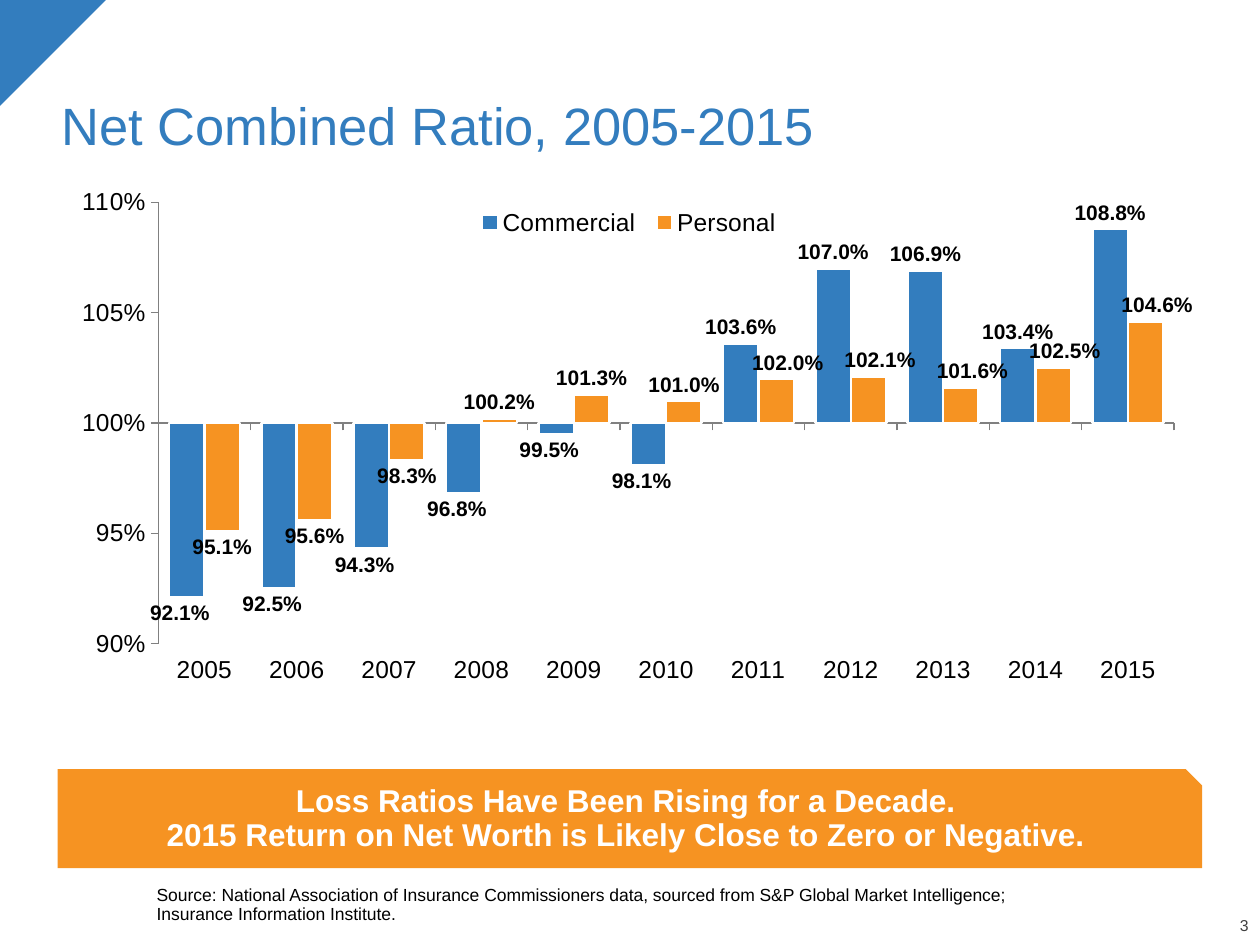
from dataclasses import dataclass

from lxml import etree
from pptx import Presentation
from pptx.chart.data import CategoryChartData
from pptx.dml.color import RGBColor
from pptx.enum.chart import XL_CHART_TYPE, XL_LABEL_POSITION, XL_LEGEND_POSITION, XL_TICK_LABEL_POSITION, XL_TICK_MARK
from pptx.enum.shapes import MSO_SHAPE
from pptx.enum.text import MSO_ANCHOR, MSO_AUTO_SIZE, PP_ALIGN
from pptx.oxml.ns import qn
from pptx.util import Pt

CLUSTERED = XL_CHART_TYPE.COLUMN_CLUSTERED
OUTSIDE_END = XL_LABEL_POSITION.OUTSIDE_END
LEGEND_BOTTOM = XL_LEGEND_POSITION.BOTTOM
LABELS_LOW = XL_TICK_LABEL_POSITION.LOW
TICK_OUT, TICK_NONE = XL_TICK_MARK.OUTSIDE, XL_TICK_MARK.NONE
TRIANGLE, SNIPPED = MSO_SHAPE.RIGHT_TRIANGLE, MSO_SHAPE.SNIP_1_RECTANGLE
BOTTOM, MIDDLE = MSO_ANCHOR.BOTTOM, MSO_ANCHOR.MIDDLE
LEFT, CENTER, RIGHT = PP_ALIGN.LEFT, PP_ALIGN.CENTER, PP_ALIGN.RIGHT
NO_AUTOFIT = MSO_AUTO_SIZE.NONE


@dataclass(frozen=True)
class Theme:
    """Colours, font and type sizes of the slide."""
    font: str = "Arial"
    blue: RGBColor = RGBColor(0x33, 0x7D, 0xBE)
    orange: RGBColor = RGBColor(0xF6, 0x93, 0x22)
    white: RGBColor = RGBColor(0xFF, 0xFF, 0xFF)
    black: RGBColor = RGBColor(0, 0, 0)
    grey: RGBColor = RGBColor(0x40, 0x40, 0x40)
    axis: RGBColor = RGBColor(0x80, 0x80, 0x80)
    title: int = 30
    banner: int = 18
    chart: int = 14
    label: int = 12
    source: int = 10
    number: int = 9


THEME = Theme()
YEARS = [str(year) for year in range(2005, 2016)]
RATIOS = {
    "Commercial": (THEME.blue, [0.921, 0.925, 0.943, 0.968, 0.995, 0.981,
                                1.036, 1.07, 1.069, 1.034, 1.088]),
    "Personal": (THEME.orange, [0.951, 0.956, 0.983, 1.002, 1.013, 1.01,
                                1.02, 1.021, 1.016, 1.025, 1.046]),
}
LABEL_SHIFTS = {
    "Commercial": dict.fromkeys(range(6), -0.006),
    "Personal": dict.fromkeys(range(6, 11), 0.01),
}


def apply(target, values):
    """Set each attribute in values on the target."""
    for name, value in values.items():
        setattr(target, name, value)


def place(shape, box):
    """Move the shape to the box, given in points."""
    apply(shape, dict(zip(("left", "top", "width", "height"), map(Pt, box))))


def style_font(font, size, color, bold=False):
    """Format a font in the theme's typeface."""
    apply(font, {"name": THEME.font, "size": Pt(size), "bold": bold})
    font.color.rgb = color


def write(shape, text, size, color, align=LEFT, anchor=BOTTOM, bold=False, margins=(0, 0, 0, 0)):
    """Write one formatted paragraph into the shape."""
    frame = shape.text_frame
    sides = ("margin_left", "margin_top", "margin_right", "margin_bottom")
    apply(frame, {"word_wrap": True, "auto_size": NO_AUTOFIT, "vertical_anchor": anchor,
                  **dict(zip(sides, map(Pt, margins)))})
    paragraph = frame.paragraphs[0]
    paragraph.text = text
    apply(paragraph, {"alignment": align, "line_spacing": 0.9, "space_before": Pt(0)})
    for run in paragraph.runs:
        style_font(run.font, size, color, bold)


def add_filled(slide, kind, box, color):
    """Add a flat preset shape without outline."""
    shape = slide.shapes.add_shape(kind, *map(Pt, box))
    shape.shadow.inherit = False
    shape.fill.solid()
    shape.fill.fore_color.rgb = color
    shape.line.fill.background()
    return shape


def add_corner(slide, box):
    """Add the triangle in the top left corner."""
    add_filled(slide, TRIANGLE, box, THEME.blue).rotation = 90


def add_title(slide, box, text):
    """Fill the title placeholder."""
    place(slide.shapes.title, box)
    write(slide.shapes.title, text, THEME.title, THEME.blue, margins=(7.2, 3.6, 7.2, 3.6))


def add_source(slide, box, text):
    """Fill the body placeholder with the unbulleted source line."""
    source = slide.placeholders[1]
    place(source, box)
    properties = source.text_frame.paragraphs[0]._p.get_or_add_pPr()
    properties.set("marL", "0")
    properties.set("indent", "0")
    etree.SubElement(properties, qn("a:buNone"))
    write(source, text, THEME.source, THEME.black)


def add_banner(slide, box, text):
    """Add the snipped message banner."""
    banner = add_filled(slide, SNIPPED, box, THEME.orange)
    write(banner, text, THEME.banner, THEME.white, CENTER, MIDDLE, True, (7.2, 3.6, 7.2, 7.2))


def add_number(slide, box, text):
    """Add the slide number."""
    write(slide.shapes.add_textbox(*map(Pt, box)), text, THEME.number, THEME.grey, RIGHT)


def make_layout(**settings):
    """Build a manual chart layout from its settings."""
    layout = etree.Element(qn("c:layout"))
    manual = etree.SubElement(layout, qn("c:manualLayout"))
    for name, value in settings.items():
        etree.SubElement(manual, qn(f"c:{name}")).set("val", str(value))
    return layout


def set_layout(parent, layout, previous=None):
    """Put the layout after the previous element, or first, in its parent."""
    for old in parent.findall(qn("c:layout")):
        parent.remove(old)
    parent.insert(0 if previous is None else parent.index(previous) + 1, layout)


def style_series(series, color, shifts):
    """Format a series and move its crowded labels sideways."""
    series.invert_if_negative = False
    series.format.fill.solid()
    series.format.fill.fore_color.rgb = color
    series.format.line.color.rgb = THEME.white
    series.format.line.width = Pt(1.5)
    labels = series.data_labels
    apply(labels, {"show_value": True, "position": OUTSIDE_END,
                   "number_format": "0.0%", "number_format_is_linked": False})
    style_font(labels.font, THEME.label, THEME.black, True)
    for index, shift in shifts.items():
        label = series.points[index].data_label
        style_font(label.font, THEME.label, THEME.black, True)
        label.position = OUTSIDE_END
    for element in labels._element.findall(qn("c:dLbl")):
        index = element.find(qn("c:idx"))
        set_layout(element, make_layout(x=shifts[int(index.get("val"))], y=0), index)


def add_ratio_chart(slide, box):
    """Add the clustered columns that start from the 100% line."""
    data = CategoryChartData(number_format="0.0%")
    data.categories = YEARS
    for name, (_, values) in RATIOS.items():
        data.add_series(name, values)
    chart = slide.shapes.add_chart(CLUSTERED, *map(Pt, box), data).chart
    style_font(chart.font, THEME.chart, THEME.black)
    apply(chart, {"has_title": False, "has_legend": True})
    apply(chart.legend, {"position": LEGEND_BOTTOM, "include_in_layout": False})
    set_layout(chart.legend._element,
               make_layout(xMode="edge", yMode="edge", x=0.36, y=0.05, w=0.28, h=0.06),
               chart.legend._element.find(qn("c:legendPos")))
    set_layout(chart._chartSpace.chart.plotArea,
               make_layout(layoutTarget="inner", xMode="edge", yMode="edge",
                           x=0.088, y=0.045, w=0.889, h=0.771))
    apply(chart.value_axis, {"minimum_scale": 0.9, "maximum_scale": 1.1, "major_unit": 0.05,
                             "crosses_at": 1, "has_major_gridlines": False})
    apply(chart.value_axis.tick_labels, {"number_format": "0%", "number_format_is_linked": False})
    chart.category_axis.tick_label_position = LABELS_LOW
    for axis in (chart.category_axis, chart.value_axis):
        apply(axis, {"major_tick_mark": TICK_OUT, "minor_tick_mark": TICK_NONE})
        axis.format.line.color.rgb = THEME.axis
        axis.format.line.width = Pt(0.75)
    plot = chart.plots[0]
    apply(plot, {"gap_width": 60, "overlap": 0, "vary_by_categories": False})
    for series in plot.series:
        style_series(series, RATIOS[series.name][0], LABEL_SHIFTS[series.name])


def main():
    """Build and save the slide."""
    deck = Presentation()
    apply(deck, {"slide_width": Pt(720), "slide_height": Pt(540)})
    slide = deck.slides.add_slide(deck.slide_layouts[1])
    add_corner(slide, (0, 0, 60.5, 60.5))
    add_number(slide, (679, 525, 34.5, 9.5), "3")
    add_title(slide, (28, 18, 666, 75), "Net Combined Ratio, 2005-2015")
    add_source(slide, (89.5, 495.5, 605, 32.5),
               "Source: National Association of Insurance Commissioners data, sourced from "
               "S&P Global Market Intelligence;\nInsurance Information Institute.")
    add_banner(slide, (33, 439.5, 654, 56.5),
               "Loss Ratios Have Been Rising for a Decade.\n"
               "2015 Return on Net Worth is Likely Close to Zero or Negative.")
    add_ratio_chart(slide, (33, 101, 653, 327))
    deck.save("out.pptx")


if __name__ == "__main__":
    main()
